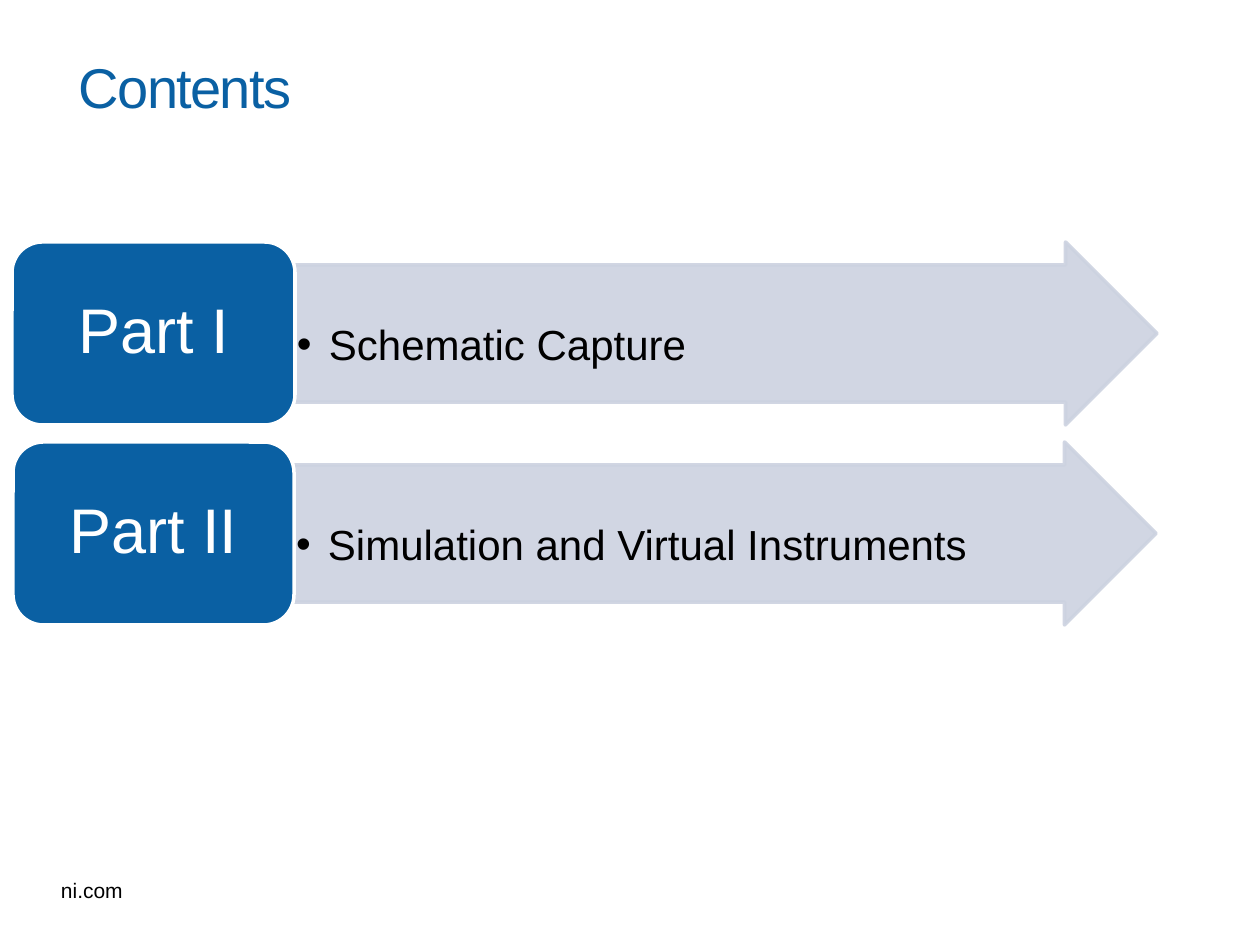
from lxml.etree import SubElement
from pptx import Presentation
from pptx.dml.color import RGBColor
from pptx.enum.shapes import MSO_SHAPE as Shape
from pptx.enum.text import MSO_ANCHOR as Anchor, PP_ALIGN as Align
from pptx.oxml.ns import qn
from pptx.util import Pt

BLUE = RGBColor(0x0A, 0x60, 0xA3)
PALE = RGBColor(0xCC, 0xD2, 0xE0)
WHITE = RGBColor(0xFF, 0xFF, 0xFF)
BLACK = RGBColor(0, 0, 0)

TITLE = "Contents"
FOOTER = "ni.com"
# part, topic, left edge and width of the part's box
PARTS = [
    ("Part I", "Schematic Capture", 12, 283),
    ("Part II", "Simulation and Virtual Instruments", 13, 281),
]
FIRST_TOP, ROW_PITCH, ROW_HEIGHT = 242, 200, 183
ARROW_WIDTH = 862


def px(length):
    return round(length * 914400 / 126)


def write(holder, text, size, color, align=Align.LEFT, anchor=Anchor.MIDDLE,
          insets=(13, 6, 13, 6), wrap=True, line_spacing=None, bullet_indent=0,
          tracking=0):
    frame = holder.text_frame
    frame.word_wrap = wrap
    frame.vertical_anchor = anchor
    (frame.margin_left, frame.margin_top,
     frame.margin_right, frame.margin_bottom) = map(px, insets)
    paragraph = frame.paragraphs[0]
    paragraph.alignment = align
    if line_spacing:
        paragraph.line_spacing = line_spacing
    if bullet_indent:
        props = paragraph._p.get_or_add_pPr()
        props.set("marL", str(px(bullet_indent)))
        props.set("indent", str(-px(bullet_indent)))
        SubElement(props, qn("a:buFont"), typeface="Arial")
        SubElement(props, qn("a:buChar"), char="•")
    run = paragraph.add_run()
    run.text = text
    run.font.name = "Arial"
    run.font.size = Pt(size)
    run.font.color.rgb = color
    if tracking:
        run._r.get_or_add_rPr().set("spc", str(tracking * 100))


def add_block(slide, preset, left, top, width, fill, line, opacity=100):
    block = slide.shapes.add_shape(
        preset, px(left), px(top), px(width), px(ROW_HEIGHT))
    block.shadow.inherit = False
    block.fill.solid()
    block.fill.fore_color.rgb = fill
    block.line.color.rgb = line
    block.line.width = Pt(2)
    if opacity < 100:
        for color in block._element.spPr.iter(qn("a:srgbClr")):
            SubElement(color, qn("a:alpha"), val=str(opacity * 1000))
    return block


def main():
    deck = Presentation()
    deck.slide_width, deck.slide_height = px(1260), px(945)
    slide = deck.slides.add_slide(deck.slide_layouts[5])

    footer = slide.shapes.add_textbox(px(48), px(872), px(89), px(38))
    write(footer, FOOTER, 12, BLACK, anchor=Anchor.TOP, wrap=False)

    title = slide.shapes.title
    title.left, title.top, title.width, title.height = map(px, (66, 20, 1125, 132))
    write(title, TITLE, 32, BLUE, tracking=-1)

    for row, (part, topic, left, width) in enumerate(PARTS):
        top = FIRST_TOP + row * ROW_PITCH
        arrow = add_block(slide, Shape.RIGHT_ARROW, left + width, top,
                          ARROW_WIDTH, PALE, PALE, opacity=90)
        arrow.adjustments[0] = 0.75
        arrow.adjustments[1] = 0.5
        write(arrow, topic, 24, BLACK, insets=(2, 28, 2, 2),
              line_spacing=0.9, bullet_indent=32)
        box = add_block(slide, Shape.ROUNDED_RECTANGLE, left, top, width, BLUE, WHITE)
        write(box, part, 36, WHITE, align=Align.CENTER,
              insets=(19, 9, 19, 9), line_spacing=0.9)

    deck.save("out.pptx")


if __name__ == "__main__":
    main()
